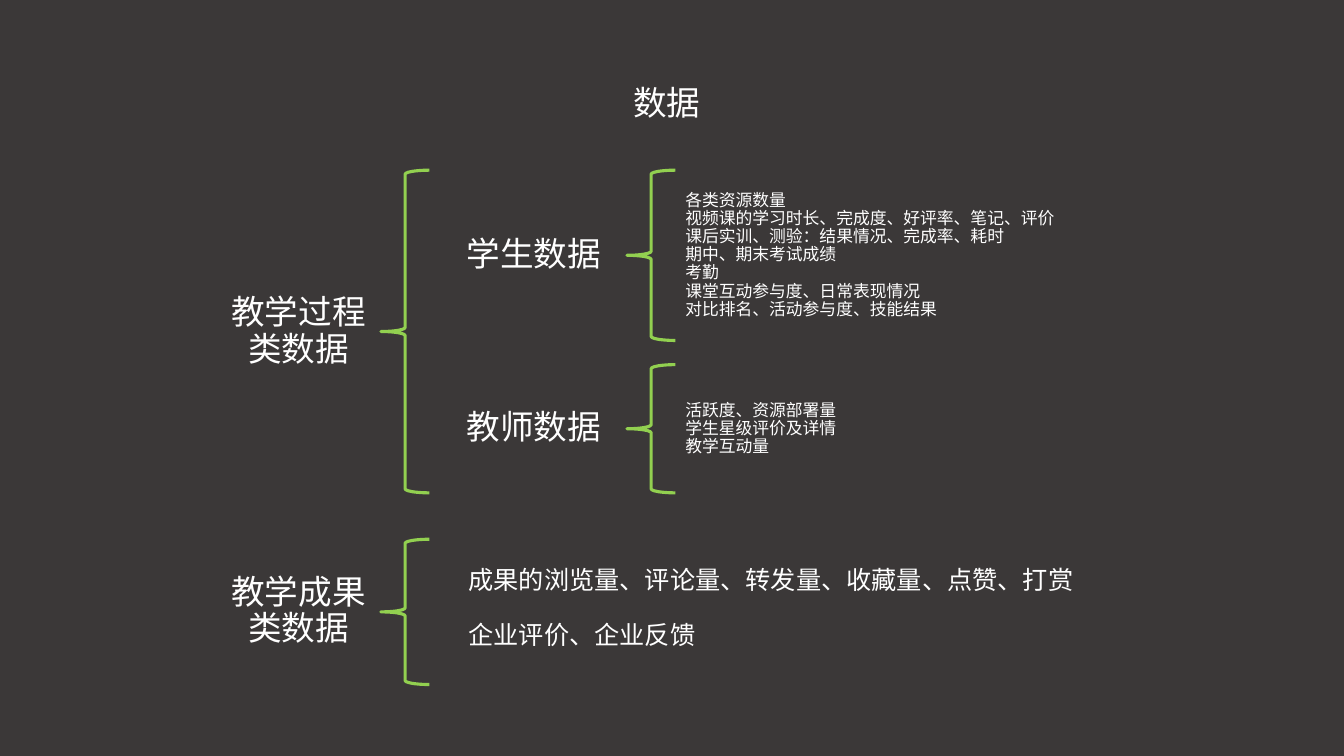
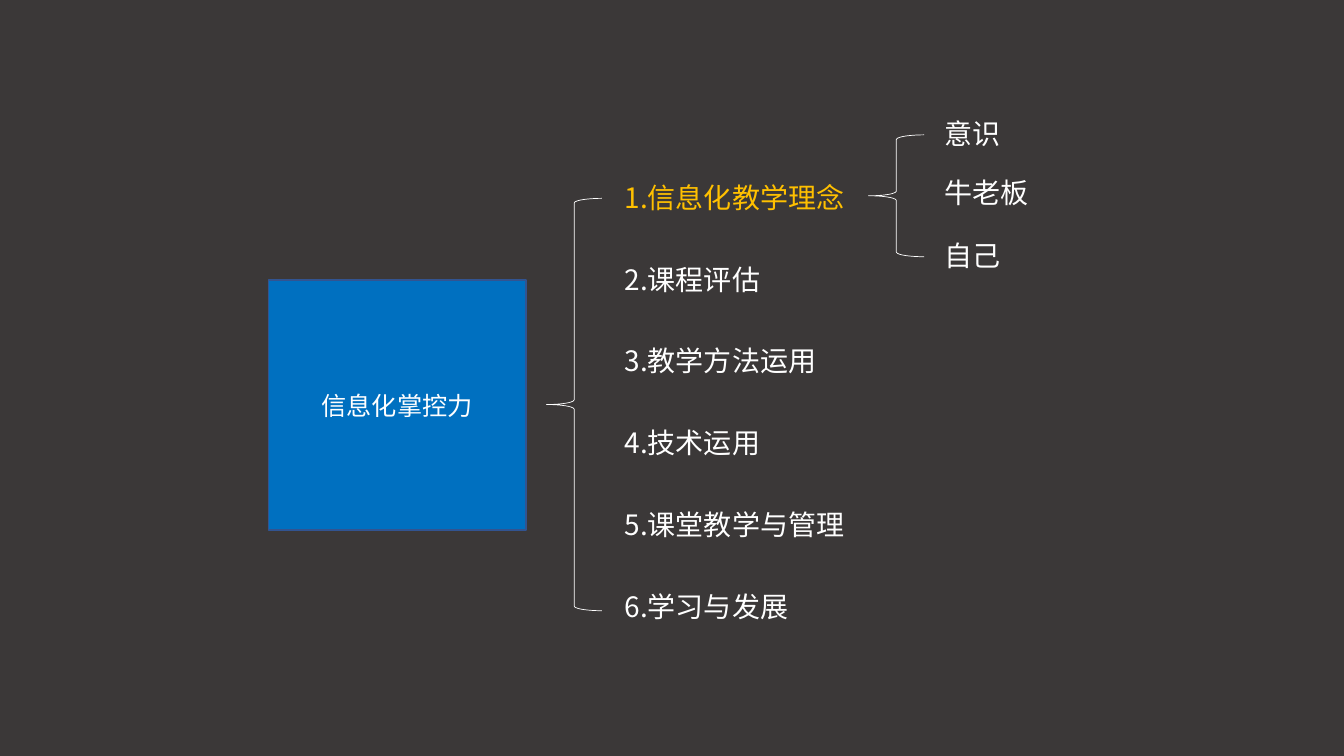
from pptx import Presentation
from pptx.dml.color import RGBColor
from pptx.enum.shapes import MSO_SHAPE as Shape
from pptx.enum.text import MSO_ANCHOR as Anchor, PP_ALIGN as Align
from pptx.oxml.ns import qn
from pptx.util import Cm, Pt

DARK = RGBColor(0x3B, 0x38, 0x38)
WHITE = RGBColor(0xFF, 0xFF, 0xFF)
GREEN = RGBColor(0x92, 0xD0, 0x50)
BLUE = RGBColor(0x00, 0x70, 0xC0)
NAVY = RGBColor(0x32, 0x54, 0x91)
GOLD = RGBColor(0xFF, 0xC0, 0x00)
FONT = "Noto Sans CJK SC"
ROW = 2.16  # height of a one-line label


def write(slide, box, text, size, color=WHITE, align=Align.LEFT, gap=0, shape=None):
    """Put styled text in a new text box, or in the given shape."""
    left, top, width, height = map(Cm, box)
    if shape is None:
        shape = slide.shapes.add_textbox(left, top, width, height)
    else:
        shape.left, shape.top, shape.width, shape.height = left, top, width, height
    frame = shape.text_frame
    frame.word_wrap = True
    frame.vertical_anchor = Anchor.MIDDLE
    frame.text = text
    for i, para in enumerate(frame.paragraphs):
        para.alignment = align
        para.line_spacing = 0.9
        para.space_before = Pt(gap if i else 0)
        for run in para.runs:
            run.font.name = FONT
            run.font.size = Pt(size)
            run.font.color.rgb = color
            east = run.font._element.makeelement(qn("a:ea"), {"typeface": FONT})
            run.font._element.find(qn("a:latin")).addnext(east)


def brace(slide, box, color, weight):
    mark = slide.shapes.add_shape(Shape.LEFT_BRACE, *map(Cm, box))
    mark.shadow.inherit = False
    mark.fill.background()
    mark.line.color.rgb = color
    mark.line.width = Pt(weight)


prs = Presentation()
prs.slide_width, prs.slide_height = Cm(33.87), Cm(19.05)
back = prs.slide_master.background.fill
back.solid()
back.fore_color.rgb = DARK

# Slide 1: title
slide = prs.slides.add_slide(prs.slide_layouts[5])
write(slide, (5.44, 1.55, 22.73, ROW), "数据", 24, align=Align.CENTER,
      shape=slide.shapes.title)

# Two main groups: label and brace
for text, label, top, height in [
    ("教学过程类数据", 7.29, 4.29, 8.13),
    ("教学成果类数据", 14.33, 13.59, 3.66),
]:
    write(slide, (5.44, label, 4.17, ROW), text, 24, align=Align.CENTER)
    brace(slide, (9.6, top, 1.22, height), GREEN, 2.25)

# Student and teacher data: label, brace and details
for text, label, top, height, lines in [
    ("学生数据", 5.36, 4.29, 4.29, [
        "各类资源数量",
        "视频课的学习时长、完成度、好评率、笔记、评价",
        "课后实训、测验：结果情况、完成率、耗时",
        "期中、期末考试成绩",
        "考勤",
        "课堂互动参与度、日常表现情况",
        "对比排名、活动参与度、技能结果",
    ]),
    ("教师数据", 9.73, 9.19, 3.23, [
        "活跃度、资源部署量",
        "学生星级评价及详情",
        "教学互动量",
    ]),
]:
    write(slide, (10.82, label, 5.26, ROW), text, 24, align=Align.CENTER)
    brace(slide, (15.8, top, 1.22, height), GREEN, 2.25)
    write(slide, (17.02, top, 11.58, height), "\n".join(lines), 12)

# Result data
write(slide, (11.56, 13.56, 17.04, 3.56),
      "成果的浏览量、评论量、转发量、收藏量、点赞、打赏\n企业评价、企业反馈",
      18, gap=19.5)

# Slide 2: topic box
slide = prs.slides.add_slide(prs.slide_layouts[6])
topic = slide.shapes.add_shape(Shape.RECTANGLE, Cm(6.76), Cm(7.06), Cm(6.5), Cm(6.3))
topic.shadow.inherit = False
topic.fill.solid()
topic.fill.fore_color.rgb = BLUE
topic.line.color.rgb = NAVY
topic.line.width = Pt(1)
topic.text_frame.text = "信息化掌控力"
topic.text_frame.vertical_anchor = Anchor.MIDDLE
para = topic.text_frame.paragraphs[0]
para.alignment = Align.CENTER
font = para.runs[0].font
font.name, font.size, font.color.rgb = "Calibri", Pt(18), WHITE

# Six skills, the first one highlighted
brace(slide, (13.77, 5, 1.4, 10.39), WHITE, 0.5)
skills = ["信息化教学理念", "课程评估", "教学方法运用", "技术运用", "课堂教学与管理", "学习与发展"]
for i, skill in enumerate(skills):
    write(slide, (15.49, 3.94 + 2.06 * i, 7.11, ROW), f"{i + 1}.{skill}", 20,
          WHITE if i else GOLD)

# Parts of the first skill
brace(slide, (21.89, 3.4, 1.4, 3.07), WHITE, 0.5)
for top, text in [(2.34, "意识"), (3.81, "牛老板"), (5.41, "自己")]:
    write(slide, (23.55, top, 4.22, ROW), text, 20)

prs.save("out.pptx")
